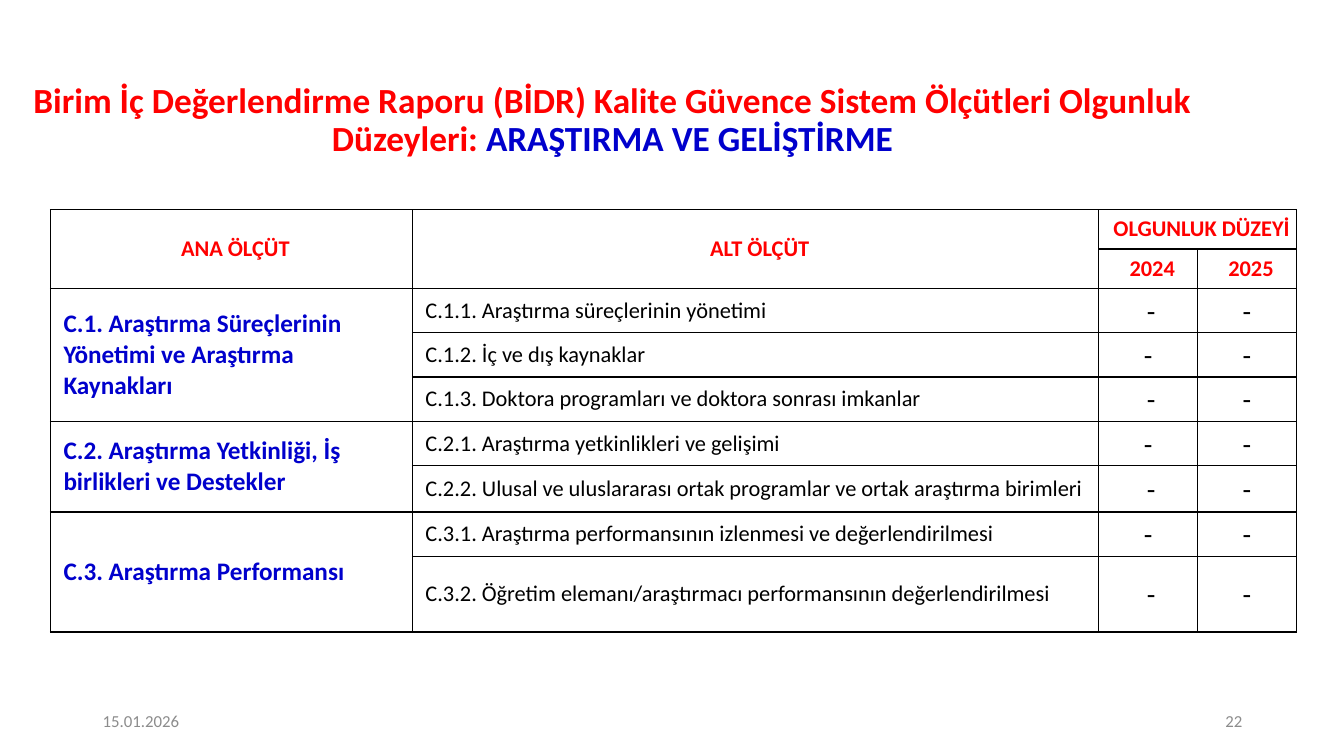
from pptx import Presentation
from pptx.dml.color import RGBColor
from pptx.enum.text import MSO_ANCHOR, PP_ALIGN
from pptx.oxml import parse_xml
from pptx.oxml.ns import nsdecls
from pptx.util import Inches, Pt

COLORS = {"red": "FF0000", "blue": "0000CC", "black": "000000", "gray": "8C8C8C"}
FORMATS = {
    "title": {"size": Pt(25.2), "bold": True, "color": "red"},
    "topic": {"size": Pt(25.2), "bold": True, "color": "blue"},
    "footer": {"size": Pt(12), "bold": False, "color": "gray"},
    "header": {"size": Pt(16), "bold": True, "color": "red"},
    "main": {"size": Pt(18), "bold": True, "color": "blue"},
    "sub": {"size": Pt(16), "bold": False, "color": "black"},
    "score": {"size": Pt(20), "bold": False, "color": "black"},
}
CRITERIA = [
    ("C.1. Araştırma Süreçlerinin Yönetimi ve Araştırma Kaynakları", [
        "C.1.1. Araştırma süreçlerinin yönetimi",
        "C.1.2. İç ve dış kaynaklar",
        "C.1.3. Doktora programları ve doktora sonrası imkanlar"]),
    ("C.2. Araştırma Yetkinliği, İş birlikleri ve Destekler", [
        "C.2.1. Araştırma yetkinlikleri ve gelişimi",
        "C.2.2. Ulusal ve uluslararası ortak programlar ve ortak araştırma birimleri"]),
    ("C.3. Araştırma Performansı", [
        "C.3.1. Araştırma performansının izlenmesi ve değerlendirilmesi",
        "C.3.2. Öğretim elemanı/araştırmacı performansının değerlendirilmesi"]),
]
COLUMNS = [26.93, 51.08, 7.35, 7.35]
ROWS = [5.2] * 2 + [5.87] * 4 + [6.13, 5.87, 10]


class SlideBuilder:
    """Holds the style and current slide; lengths are percentages of the slide."""

    def __init__(self, prs, font="Calibri"):
        self.w, self.h = prs.slide_width, prs.slide_height
        self.font = font
        self.s = prs.slides.add_slide(prs.slide_layouts[6])

    def x(self, share):
        return round(self.w * share / 100)

    def y(self, share):
        return round(self.h * share / 100)

    def add_runs(self, tf, runs, align=PP_ALIGN.LEFT, spacing=1.0, indent=0):
        p = tf.paragraphs[0]
        p.alignment, p.line_spacing = align, spacing
        if indent:
            p._p.get_or_add_pPr().set("marL", str(Inches(indent)))
        for text, style in runs:
            r = p.add_run()
            r.text = text
            r.font.name = self.font
            for name, value in FORMATS[style].items():
                if name == "color":
                    r.font.color.rgb = RGBColor.from_string(COLORS[value])
                else:
                    setattr(r.font, name, value)

    def text(self, left, top, width, height, runs, **layout):
        sp = self.s.shapes.add_textbox(self.x(left), self.y(top), self.x(width), self.y(height))
        tf = sp.text_frame
        tf.word_wrap, tf.vertical_anchor = True, MSO_ANCHOR.MIDDLE
        self.add_runs(tf, runs, **layout)

    def table(self, left, top, columns, rows):
        frame = self.s.shapes.add_table(len(rows), len(columns), self.x(left), self.y(top),
                                        self.x(sum(columns)), self.y(sum(rows)))
        table = frame.table
        table.first_row = table.horz_banding = False
        for column, share in zip(table.columns, columns):
            column.width = self.x(share)
        for row, share in zip(table.rows, rows):
            row.height = self.y(share)
        for cell in table.iter_cells():
            self.frame_cell(cell)
        return table

    def frame_cell(self, cell):
        cell.margin_left = cell.margin_right = Inches(0.05)
        cell.margin_top = cell.margin_bottom = 0
        cell.vertical_anchor = MSO_ANCHOR.MIDDLE
        for side in ("lnL", "lnR", "lnT", "lnB"):
            cell._tc.get_or_add_tcPr().append(parse_xml(
                f'<a:{side} {nsdecls("a")} w="{Pt(1)}"><a:solidFill>'
                f'<a:srgbClr val="{COLORS["black"]}"/></a:solidFill></a:{side}>'))
        cell.fill.background()

    def cell(self, table, row, col, text, style, span=(1, 1), **layout):
        cell = table.cell(row, col)
        if span != (1, 1):
            cell.merge(table.cell(row + span[0] - 1, col + span[1] - 1))
        self.add_runs(cell.text_frame, [(text, style)], **layout)


def main():
    prs = Presentation()
    prs.slide_width, prs.slide_height = Inches(13.33), Inches(7.5)
    b = SlideBuilder(prs)
    b.text(1.73, 10.67, 87.7, 10.67, [
        ("Birim İç Değerlendirme Raporu (BİDR) Kalite Güvence Sistem Ölçütleri Olgunluk Düzeyleri: ", "title"),
        ("ARAŞTIRMA VE GELİŞTİRME", "topic")], align=PP_ALIGN.CENTER, spacing=0.9)
    b.text(6.9, 92.67, 22.5, 5.33, [("15.01.2026", "footer")])
    b.text(70.67, 92.67, 22.5, 5.33, [("22", "footer")], align=PP_ALIGN.RIGHT)

    table = b.table(3.75, 27.73, COLUMNS, ROWS)
    headers = [(0, 0, "ANA ÖLÇÜT", (2, 1)), (0, 1, "ALT ÖLÇÜT", (2, 1)),
               (0, 2, "OLGUNLUK DÜZEYİ", (1, 2)), (1, 2, "2024", (1, 1)), (1, 3, "2025", (1, 1))]
    for row, col, text, span in headers:
        b.cell(table, row, col, text, "header", span, align=PP_ALIGN.CENTER, indent=0.08)
    row = 2
    for criterion, subs in CRITERIA:
        b.cell(table, row, 0, criterion, "main", (len(subs), 1), indent=0.08)
        for sub in subs:
            b.cell(table, row, 1, sub, "sub", indent=0.08)
            for col in (2, 3):
                shift = 0.06 if col == 2 and row % 2 == 0 else 0
                b.cell(table, row, col, "-", "score", align=PP_ALIGN.CENTER,
                       spacing=1.07, indent=shift)
            row += 1
    prs.save("out.pptx")


if __name__ == "__main__":
    main()
